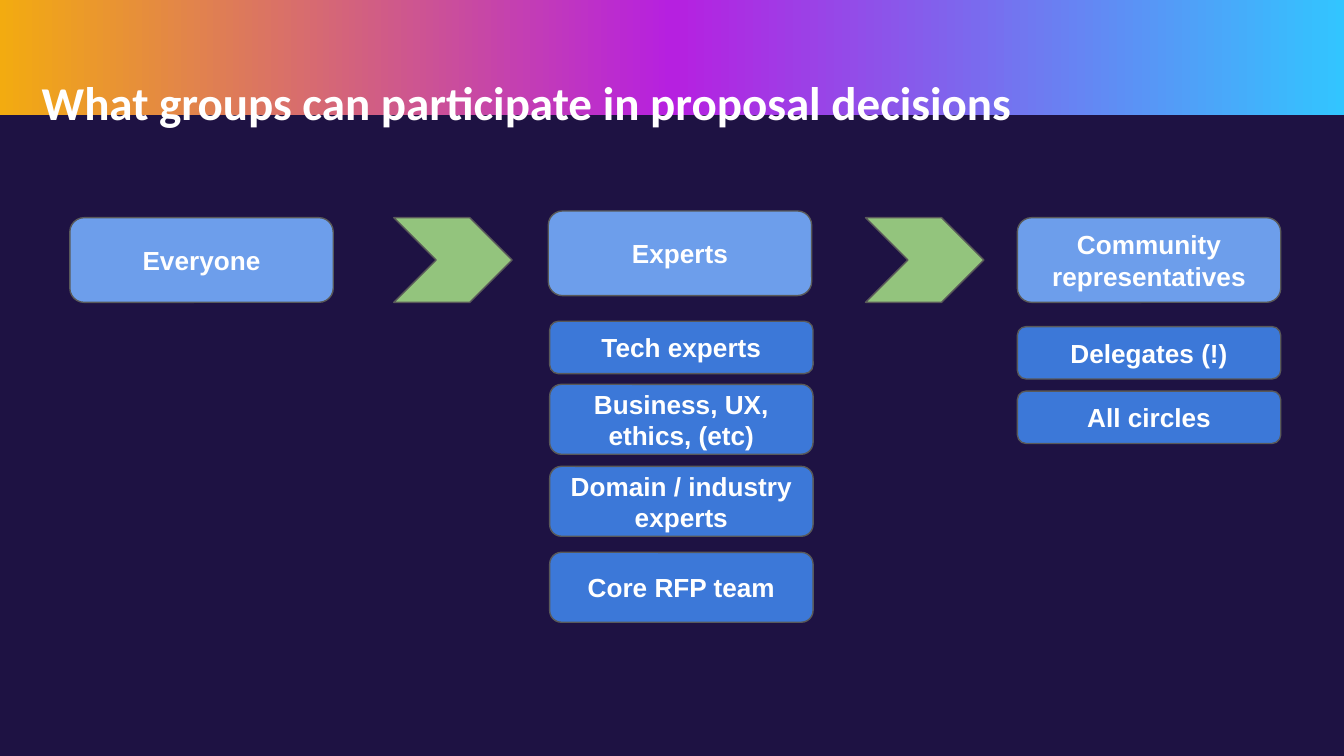
"""Build a slide showing which groups take part in proposal decisions."""
from copy import deepcopy

from pptx import Presentation
from pptx.dml.color import RGBColor
from pptx.enum.shapes import MSO_SHAPE
from pptx.enum.text import MSO_ANCHOR, MSO_AUTO_SIZE, PP_ALIGN
from pptx.util import Inches, Pt

RECTANGLE = MSO_SHAPE.RECTANGLE
ROUNDED = MSO_SHAPE.ROUNDED_RECTANGLE
CHEVRON = MSO_SHAPE.CHEVRON
TOP, MIDDLE = MSO_ANCHOR.TOP, MSO_ANCHOR.MIDDLE
LEFT, CENTER = PP_ALIGN.LEFT, PP_ALIGN.CENTER
NO_AUTOFIT = MSO_AUTO_SIZE.NONE

TITLE = "What groups can participate in proposal decisions"
STAGES = [
    {"name": "Everyone", "at": (0.52, 1.62), "members": []},
    {"name": "Experts", "at": (4.08, 1.57), "members": [
        ("Tech experts", 4.09, 2.39, 0.39),
        ("Business, UX, ethics, (etc)", 4.09, 2.86, 0.52),
        ("Domain / industry experts", 4.09, 3.47, 0.52),
        ("Core RFP team", 4.09, 4.11, 0.52),
    ]},
    {"name": "Community representatives", "at": (7.57, 1.62), "members": [
        ("Delegates (!)", 7.57, 2.43, 0.39),
        ("All circles", 7.57, 2.91, 0.39),
    ]},
]
ARROW_LEFTS = [2.93, 6.44]
BANNER_STOPS = [(0, "F3AB10"), (0.5, "B620E0"), (1, "32C5FF")]
BACKGROUND, WHITE, OUTLINE = "1E1243", "FFFFFF", "595959"
STAGE_BLUE, MEMBER_BLUE, ARROW_GREEN = "6D9EEB", "3C78D8", "93C47D"
GROUP_WIDTH, STAGE_HEIGHT = 1.96, 0.63
ARROW_TOP, ARROW_WIDTH = 1.62, 0.88


def color(hex_value):
    return RGBColor.from_string(hex_value)


def write(shape, text, font_name, size, align, anchor):
    frame = shape.text_frame
    frame.text = text
    frame.word_wrap = True
    frame.auto_size = NO_AUTOFIT
    frame.vertical_anchor = anchor
    frame.margin_left = frame.margin_right = Inches(0.1)
    frame.margin_top = frame.margin_bottom = Inches(0.1)
    paragraph = frame.paragraphs[0]
    paragraph.alignment = align
    font = paragraph.runs[0].font
    font.name, font.size, font.bold = font_name, Pt(size), True
    font.color.rgb = color(WHITE)
    return paragraph


def add_block(slide, kind, left, top, width, height, fill, adjustment):
    block = slide.shapes.add_shape(
        kind, Inches(left), Inches(top), Inches(width), Inches(height))
    block.shadow.inherit = False
    block.adjustments[0] = adjustment
    block.fill.solid()
    block.fill.fore_color.rgb = color(fill)
    block.line.color.rgb = color(OUTLINE)
    block.line.width = Pt(0.75)
    return block


def add_group(slide, name, left, top, height, fill):
    group = add_block(slide, ROUNDED, left, top, GROUP_WIDTH, height, fill, 0.167)
    write(group, name, "Arial", 14, CENTER, MIDDLE)


def add_banner(slide, width):
    banner = slide.shapes.add_shape(RECTANGLE, 0, 0, width, Inches(0.86))
    banner.shadow.inherit = False
    banner.line.fill.background()
    banner.fill.gradient()
    banner.fill.gradient_angle = 0
    stop_list = banner.element.xpath(".//a:gsLst")[0]
    stop_list.append(deepcopy(stop_list[0]))
    for stop, (position, hex_value) in zip(banner.fill.gradient_stops, BANNER_STOPS):
        stop.position = position
        stop.color.rgb = color(hex_value)


def add_title(slide):
    title = slide.shapes.title
    title.left, title.top = Inches(0.21), Inches(0.24)
    title.width, title.height = Inches(9.32), Inches(0.63)
    write(title, TITLE, "Calibri", 25.2, LEFT, TOP).line_spacing = 1.5
    title.element.getparent().append(title.element)


def main():
    deck = Presentation()
    deck.slide_width = Inches(10)
    deck.slide_height = deck.slide_width * 9 // 16
    slide = deck.slides.add_slide(deck.slide_layouts.get_by_name("Title Only"))
    slide.background.fill.solid()
    slide.background.fill.fore_color.rgb = color(BACKGROUND)
    add_banner(slide, deck.slide_width)
    add_title(slide)
    for stage in STAGES:
        add_group(slide, stage["name"], *stage["at"], STAGE_HEIGHT, STAGE_BLUE)
        for name, left, top, height in stage["members"]:
            add_group(slide, name, left, top, height, MEMBER_BLUE)
    for left in ARROW_LEFTS:
        add_block(slide, CHEVRON, left, ARROW_TOP, ARROW_WIDTH, STAGE_HEIGHT,
                  ARROW_GREEN, 0.5)
    deck.save("out.pptx")


if __name__ == "__main__":
    main()
